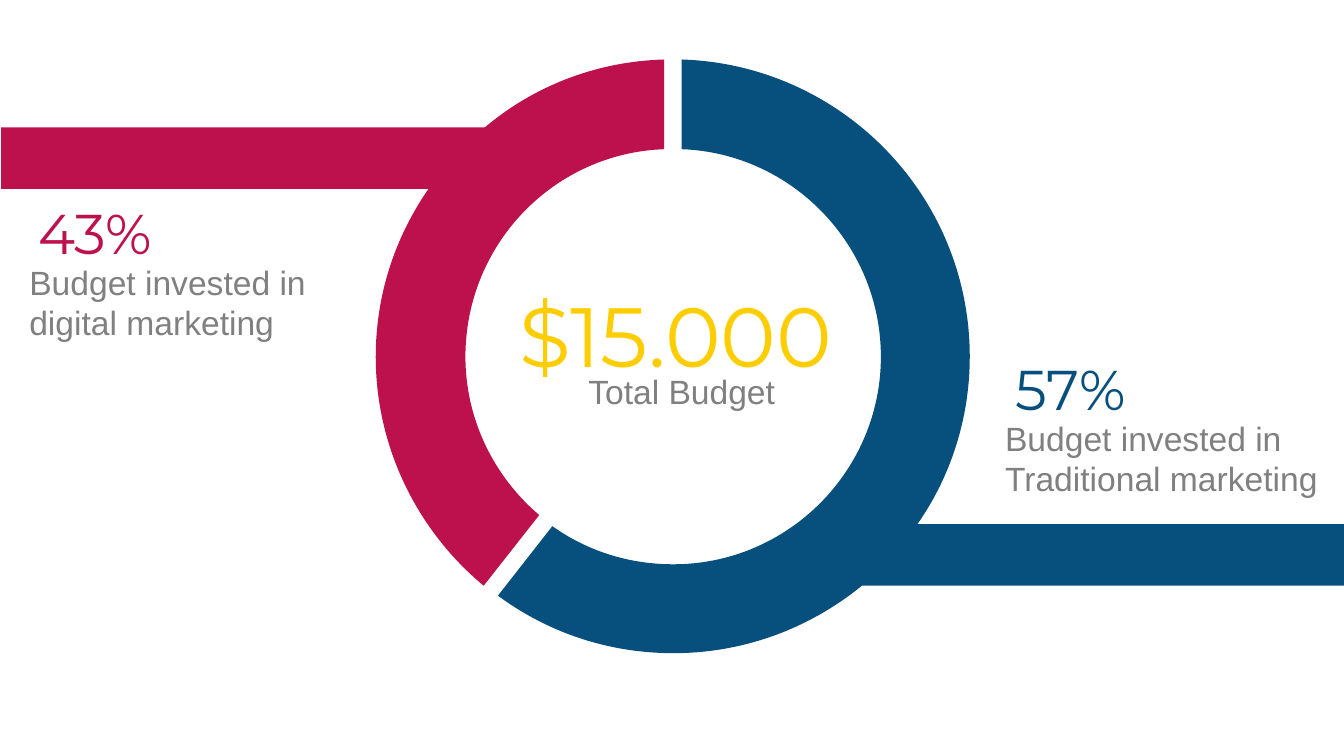
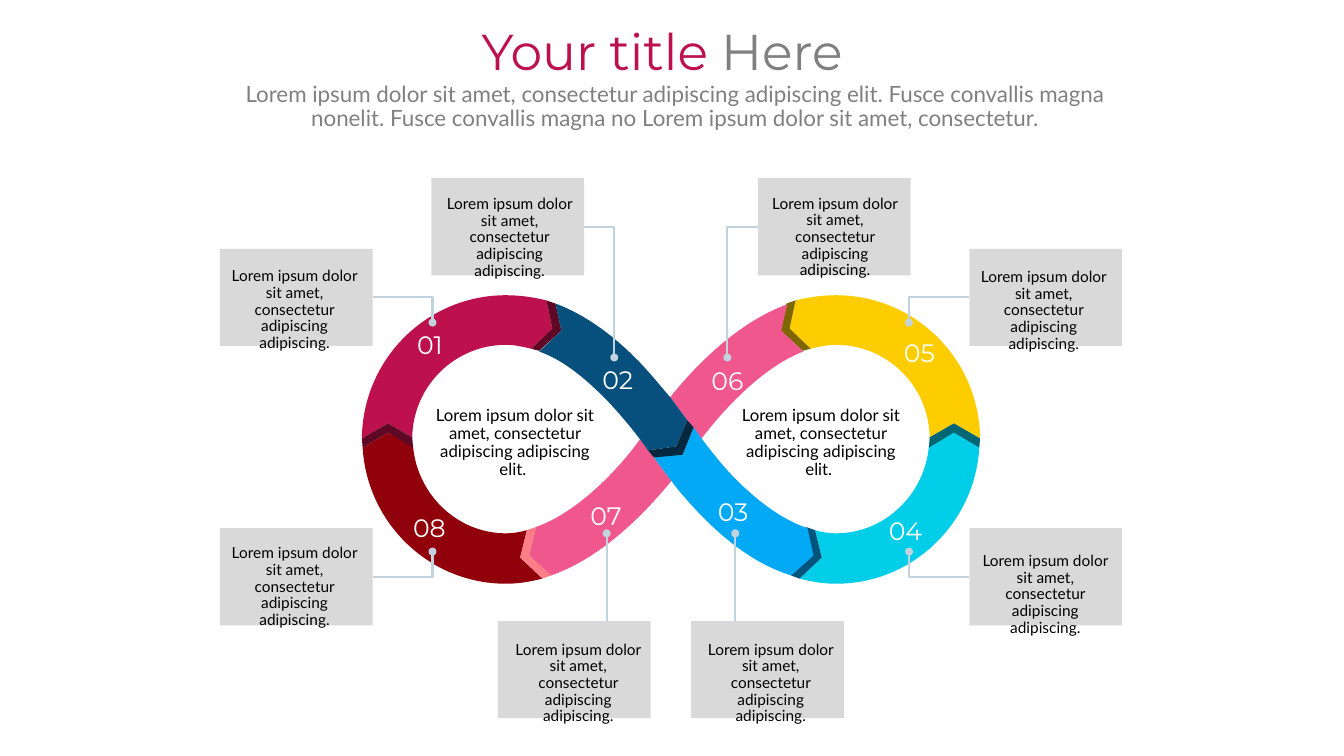
"""Build a budget ring slide and an eight-step infinity loop slide."""
import pptx
import pptx.dml.color
import pptx.enum.shapes
import pptx.enum.text
import pptx.oxml
import pptx.oxml.ns
import pptx.util

Cm = pptx.util.Cm
Pt = pptx.util.Pt
RGBColor = pptx.dml.color.RGBColor
Shape = pptx.enum.shapes.MSO_SHAPE
LEFT = pptx.enum.text.PP_ALIGN.LEFT
CENTER = pptx.enum.text.PP_ALIGN.CENTER
qn = pptx.oxml.ns.qn
DRAWING_NAMESPACE = pptx.oxml.ns.nsdecls("a")

CRIMSON = RGBColor(0xBD, 0x11, 0x4D)
NAVY = RGBColor(0x07, 0x50, 0x7E)
YELLOW = RGBColor(0xFD, 0xCD, 0x00)
PINK = RGBColor(0xF0, 0x58, 0x8D)
SKY = RGBColor(0x03, 0xA9, 0xF5)
CYAN = RGBColor(0x00, 0xCD, 0xE8)
MAROON = RGBColor(0x91, 0x01, 0x0B)
DARK_CRIMSON = RGBColor(0x5E, 0x08, 0x26)
DARK_YELLOW = RGBColor(0x7E, 0x67, 0x00)
DARK_CYAN = RGBColor(0x00, 0x66, 0x74)
DARK_NAVY = RGBColor(0x03, 0x28, 0x3F)
DARK_SKY = RGBColor(0x01, 0x54, 0x7B)
SALMON = RGBColor(0xFE, 0x7D, 0x86)
GRAY = RGBColor(0x80, 0x80, 0x80)
CARD_GRAY = RGBColor(0xD9, 0xD9, 0xD9)
LINE_GRAY = RGBColor(0xC3, 0xD3, 0xDD)
BLACK = RGBColor(0x00, 0x00, 0x00)
WHITE = RGBColor(0xFF, 0xFF, 0xFF)

HEADING_FONT = "Montserrat"
BODY_FONT = "Lato"
LABEL_FONT = "Arial"


def add_text(page, place, spans, font, size, align=CENTER, spacing=None):
    """Add one paragraph; place is left, top, width, height in cm, spans are (text, colour)."""
    box = page.shapes.add_textbox(*[Cm(length) for length in place])
    box.text_frame.word_wrap = True
    para = box.text_frame.paragraphs[0]
    para.alignment = align
    if spacing:
        para.line_spacing = spacing
    for text, color in spans:
        span = para.add_run()
        span.text = text
        span.font.name = font
        span.font.size = Pt(size)
        span.font.color.rgb = color


def add_outline(page, steps, color, mirror_axis=None):
    """Fill a closed outline in cm; a step holds an end point or two handles and an end point."""
    places = []
    for step in steps:
        pairs = list(zip(step[::2], step[1::2]))
        if mirror_axis is not None:
            pairs = [(2 * mirror_axis - x, y) for x, y in pairs]
        places.append([(Cm(x), Cm(y)) for x, y in pairs])
    builder = page.shapes.build_freeform(*places[0][-1])
    builder.add_line_segments([pairs[-1] for pairs in places[1:]], close=True)
    shape = builder.convert_to_shape()
    segments = list(shape.element.iter(qn("a:lnTo")))
    for segment, pairs in zip(segments, places[1:]):
        if len(pairs) == 3:
            segment.tag = qn("a:cubicBezTo")
            for index, (x, y) in enumerate(pairs[:2]):
                segment.insert(index, pptx.oxml.parse_xml(
                    f'<a:pt {DRAWING_NAMESPACE} x="{x - shape.left}" y="{y - shape.top}"/>'))
    shape.shadow.inherit = False
    shape.fill.solid()
    shape.fill.fore_color.rgb = color
    shape.line.fill.background()


deck = pptx.Presentation()
deck.slide_width = Cm(33.87)
deck.slide_height = Cm(19.05)
blank_layout = deck.slide_layouts[6]

page = deck.slides.add_slide(blank_layout)

digital_share = [
    (16.74, 3.76), (16.74, 1.5),
    (15.01, 1.55, 13.44, 2.18, 12.22, 3.21),
    (0.03, 3.21), (0.03, 4.76), (10.8, 4.76),
    (9.96, 5.97, 9.47, 7.42, 9.47, 8.99),
    (9.47, 11.3, 10.54, 13.39, 12.19, 14.76),
    (13.59, 12.98),
    (12.45, 12.01, 11.73, 10.57, 11.73, 8.99),
    (11.73, 6.17, 13.94, 3.86, 16.74, 3.76),
]
traditional_share = [
    (33.87, 13.21), (23.12, 13.21),
    (23.96, 12.01, 24.44, 10.54, 24.44, 8.99),
    (24.44, 4.93, 21.21, 1.63, 17.18, 1.5),
    (17.18, 3.76),
    (19.96, 3.86, 22.2, 6.17, 22.2, 8.99),
    (22.2, 11.86, 19.86, 14.22, 16.97, 14.22),
    (15.82, 14.22, 14.78, 13.87, 13.92, 13.26),
    (12.55, 15.01),
    (13.79, 15.93, 15.32, 16.46, 16.97, 16.46),
    (18.77, 16.46, 20.42, 15.82, 21.72, 14.76),
    (33.87, 14.76),
]
add_outline(page, digital_share, CRIMSON)
add_outline(page, traditional_share, NAVY)

for left, top, width, share, label, color in [
    (0.49, 4.87, 8.36, "43%", "Budget invested in digital marketing", CRIMSON),
    (25.08, 8.81, 9.55, "57%", "Budget invested in Traditional marketing", NAVY),
]:
    add_text(page, (left, top, 3.81, 1.96), [(share, color)], HEADING_FONT, 40)
    add_text(page, (left, top + 1.6, width, 2.31), [(label, GRAY)], LABEL_FONT, 24, LEFT)

add_text(page, (11.81, 7.02, 10.44, 2.82), [("$15.000", YELLOW)], HEADING_FONT, 60)
add_text(page, (13, 9.22, 8.36, 1.27), [("Total Budget", GRAY)], LABEL_FONT, 24)

page = deck.slides.add_slide(blank_layout)

LOOP_AXIS = 16.91
upper_arc = [
    (9.12, 11.05),
    (9.14, 9.04, 10.77, 7.44, 12.75, 7.44),
    (13.11, 7.44, 13.44, 7.49, 13.77, 7.57),
    (13.92, 8.28), (13.39, 8.79),
    (13.18, 8.74, 12.98, 8.69, 12.75, 8.69),
    (11.46, 8.69, 10.41, 9.73, 10.39, 11.02),
    (9.78, 10.67),
]
lower_arc = [
    (13.11, 14.05), (13.67, 14.58),
    (13.36, 14.66, 13.08, 14.71, 12.75, 14.71),
    (10.82, 14.71, 9.25, 13.18, 9.14, 11.28),
    (9.78, 10.9), (10.41, 11.25),
    (10.52, 12.47, 11.53, 13.44, 12.75, 13.44),
    (12.93, 13.44, 13.11, 13.41, 13.28, 13.36),
]
side_chevron = [(9.78, 10.67), (10.39, 11.02), (10.41, 11.28),
                (9.78, 10.9), (9.14, 11.28), (9.12, 11.05)]
top_chevron = [(13.77, 7.57), (14, 7.65), (14.15, 8.33),
               (13.59, 8.84), (13.39, 8.79), (13.92, 8.28)]
bottom_chevron = [(13.34, 14), (13.89, 14.5), (13.67, 14.58),
                  (13.11, 14.05), (13.28, 13.36), (13.51, 13.28)]

for steps, left_color, right_color in [
    (upper_arc, CRIMSON, YELLOW),
    (lower_arc, MAROON, CYAN),
    (side_chevron, DARK_CRIMSON, DARK_CYAN),
    (top_chevron, DARK_CRIMSON, DARK_YELLOW),
    (bottom_chevron, SALMON, DARK_SKY),
]:
    add_outline(page, steps, left_color)
    add_outline(page, steps, right_color, LOOP_AXIS)

band_02 = [
    (16.13, 11.07),
    (15.88, 10.74, 15.6, 10.41, 15.29, 10.08),
    (14.81, 9.6, 14.25, 9.09, 13.59, 8.86),
    (14.15, 8.33), (14, 7.65),
    (14.94, 8, 15.77, 8.71, 16.43, 9.47),
    (16.89, 10.01), (17.32, 10.59), (17.04, 11.25), (16.33, 11.35),
]
band_03 = [
    (17.68, 11.05),
    (18.03, 11.51, 18.39, 11.96, 18.82, 12.34),
    (19.25, 12.73, 19.76, 13.11, 20.35, 13.31),
    (20.5, 14), (19.94, 14.5),
    (18.8, 14.15, 17.86, 13.26, 17.09, 12.34),
    (16.92, 12.12), (16.48, 11.53), (17.2, 11.43), (17.48, 10.77),
]
band_06 = [
    (19.69, 8.33), (20.24, 8.86),
    (19.18, 9.27, 18.21, 10.36, 17.68, 11.05),
    (17.32, 10.59), (16.89, 10.01),
    (17.5, 9.25, 18.57, 8.13, 19.84, 7.67),
]
band_07 = [
    (16.92, 12.12),
    (16.28, 12.9, 15.19, 14.05, 13.89, 14.5),
    (13.34, 14), (13.51, 13.28),
    (14.58, 12.9, 15.6, 11.81, 16.13, 11.07),
    (16.33, 11.35), (16.48, 11.53),
]
center_chevron = [(17.32, 10.59), (17.48, 10.77), (17.2, 11.46),
                  (16.48, 11.53), (16.33, 11.35), (17.04, 11.25)]

for steps, color in [(band_06, PINK), (band_07, PINK), (band_02, NAVY),
                     (band_03, SKY), (center_chevron, DARK_NAVY)]:
    add_outline(page, steps, color)

CARD_WIDTH, CARD_HEIGHT, DOT_SIZE = 3.85, 2.45, 0.2
CALLOUT_TEXT = "Lorem ipsum dolor sit amet, consectetur adipiscing adipiscing."
callouts = [
    ("01", (5.54, 6.27), (5.42, 6.64), (10.9, 8.13), (10.26, 8.18)),
    ("02", (10.87, 4.49), (10.84, 4.82), (15.48, 9.01), (14.93, 9.05)),
    ("03", (17.42, 15.65), (17.42, 16.05), (18.53, 13.44), (17.84, 12.37)),
    ("04", (24.43, 13.31), (24.34, 13.82), (22.91, 13.9), (22.15, 12.85)),
    ("05", (24.43, 6.27), (24.3, 6.66), (22.91, 8.13), (22.53, 8.38)),
    ("06", (19.1, 4.49), (19.04, 4.81), (18.33, 9.01), (17.68, 9.09)),
    ("07", (12.55, 15.65), (12.57, 16.05), (15.29, 13.44), (14.63, 12.49)),
    ("08", (5.54, 13.31), (5.42, 13.62), (10.9, 13.9), (10.16, 12.78)),
]
for number, (left, top), caption, (dot_x, dot_y), number_place in callouts:
    card = page.shapes.add_shape(
        Shape.RECTANGLE, Cm(left), Cm(top), Cm(CARD_WIDTH), Cm(CARD_HEIGHT))
    if left < dot_x < left + CARD_WIDTH:
        leader = page.shapes.add_connector(
            pptx.enum.shapes.MSO_CONNECTOR.STRAIGHT,
            Cm(dot_x), Cm(top), Cm(dot_x), Cm(dot_y))
        leader.element.spPr.append(
            pptx.oxml.parse_xml(f"<a:effectLst {DRAWING_NAMESPACE}/>"))
    else:
        start_x = left + CARD_WIDTH if dot_x > left else left
        middle = Cm(top + CARD_HEIGHT / 2)
        builder = page.shapes.build_freeform(Cm(start_x), middle)
        builder.add_line_segments(
            [(Cm(dot_x), middle), (Cm(dot_x), Cm(dot_y))], close=False)
        leader = builder.convert_to_shape()
        leader.shadow.inherit = False
        leader.fill.background()
    leader.line.color.rgb = LINE_GRAY
    leader.line.width = Pt(1.5)
    dot = page.shapes.add_shape(
        Shape.OVAL, Cm(dot_x - DOT_SIZE / 2), Cm(dot_y - DOT_SIZE / 2),
        Cm(DOT_SIZE), Cm(DOT_SIZE))
    for shape, color in [(card, CARD_GRAY), (dot, LINE_GRAY)]:
        shape.shadow.inherit = False
        shape.fill.solid()
        shape.fill.fore_color.rgb = color
        shape.line.fill.background()
    add_text(page, (*number_place, 1.5, 1.02), [(number, WHITE)], HEADING_FONT, 18, LEFT)
    add_text(page, (*caption, 4.01, 2.24), [(CALLOUT_TEXT, BLACK)], BODY_FONT, 11, spacing=0.9)

LOOP_TEXT = "Lorem ipsum dolor sit amet, consectetur adipiscing adipiscing elit. "
for left in (10.62, 18.33):
    add_text(page, (left, 10.12, 4.72, 2.24), [(LOOP_TEXT, BLACK)], BODY_FONT, 12, spacing=0.9)

add_text(page, (6.97, 0.38, 19.43, 1.8),
         [("Your title ", CRIMSON), ("Here", GRAY)], HEADING_FONT, 36)
SUBTITLE = ("Lorem ipsum dolor sit amet, consectetur adipiscing adipiscing elit. "
            "Fusce convallis magna nonelit. Fusce convallis magna no "
            "Lorem ipsum dolor sit amet, consectetur.")
add_text(page, (5.42, 1.98, 23.19, 2.46), [(SUBTITLE, GRAY)], BODY_FONT, 16, spacing=0.9)

deck.save("out.pptx")
